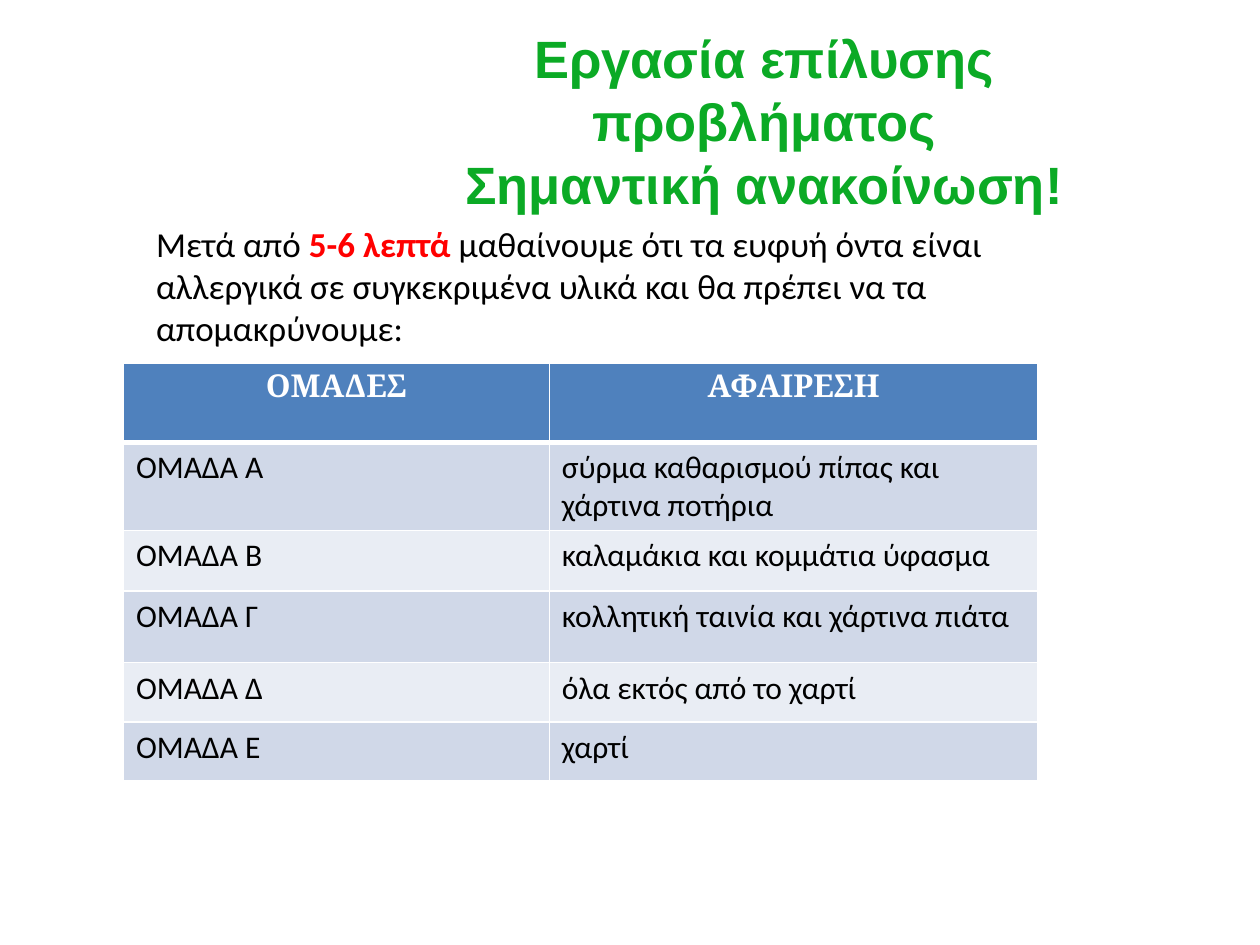
from lxml import etree
from pptx import Presentation
from pptx.dml.color import RGBColor
from pptx.enum.text import MSO_ANCHOR, PP_ALIGN
from pptx.oxml.ns import qn
from pptx.util import Inches, Pt

CENTER, LEFT = PP_ALIGN.CENTER, PP_ALIGN.LEFT
TOP, MIDDLE = MSO_ANCHOR.TOP, MSO_ANCHOR.MIDDLE
COLORS = {"title": "0BAA25", "text": "000000", "accent": "FF0000", "white": "FFFFFF",
          "header": "4F81BD", "odd": "D0D8E8", "even": "E9EDF4"}
TITLE = {"name": "Arial", "size": Pt(30), "bold": True, "color": "title"}
BODY = {"name": "Calibri", "size": Pt(20), "bold": False, "color": "text"}
ACCENT = {**BODY, "bold": True, "color": "accent"}
HEADER = {"name": "Cambria", "size": Pt(18), "bold": True, "color": "white"}
CELL = {**BODY, "size": Pt(18)}

COLUMN_WIDTHS = [3.38, 3.88]
ROW_HEIGHTS = [0.63, 0.69, 0.48, 0.57, 0.47, 0.47]
ROWS = [
    ("ΟΜΑΔΕΣ", "ΑΦΑΙΡΕΣΗ"),
    ("ΟΜΑΔΑ Α", "σύρμα καθαρισμού πίπας και χάρτινα ποτήρια"),
    ("ΟΜΑΔΑ Β", "καλαμάκια και κομμάτια ύφασμα"),
    ("ΟΜΑΔΑ Γ", "κολλητική ταινία και χάρτινα πιάτα"),
    ("ΟΜΑΔΑ Δ", "όλα εκτός από το χαρτί"),
    ("ΟΜΑΔΑ Ε", "χαρτί"),
]


def rgb(name):
    return RGBColor.from_string(COLORS[name])


def add_run(p, text, style):
    r = p.add_run()
    r.text = text
    for key, value in style.items():
        if key == "color":
            r.font.color.rgb = rgb(value)
        else:
            setattr(r.font, key, value)


def add_text(s, box, paragraphs, align, anchor):
    """Each paragraph is a list of (text, style) runs."""
    tf = s.shapes.add_textbox(*map(Inches, box)).text_frame
    tf.word_wrap = True
    tf.vertical_anchor = anchor
    for i, runs in enumerate(paragraphs):
        p = tf.paragraphs[0] if i == 0 else tf.add_paragraph()
        p.alignment = align
        for text, style in runs:
            add_run(p, text, style)


def add_title(s, box):
    lines = ["Εργασία επίλυσης προβλήματος", "Σημαντική ανακοίνωση!"]
    add_text(s, box, [[(line, TITLE)] for line in lines], CENTER, MIDDLE)


def add_intro(s, box):
    runs = [
        ("Μετά από ", BODY),
        ("5-6 λεπτά ", ACCENT),
        ("μαθαίνουμε ότι τα ευφυή όντα είναι αλλεργικά σε συγκεκριμένα υλικά "
         "και θα πρέπει να τα απομακρύνουμε:", BODY),
    ]
    add_text(s, box, [runs], LEFT, TOP)


def set_borders(cell, widths):
    """Draw white borders; widths maps the sides L, R, T, B to points."""
    tc_pr = cell._tc.get_or_add_tcPr()
    for i, (side, width) in enumerate(widths.items()):
        ln = etree.Element(qn(f"a:ln{side}"), w=str(Pt(width)))
        fill = etree.SubElement(ln, qn("a:solidFill"))
        etree.SubElement(fill, qn("a:srgbClr"), val=COLORS["white"])
        tc_pr.insert(i, ln)


def add_groups_table(s, box):
    table = s.shapes.add_table(len(ROWS), len(COLUMN_WIDTHS), *map(Inches, box)).table
    for column, width in zip(table.columns, COLUMN_WIDTHS):
        column.width = Inches(width)
    for i, (row, height, texts) in enumerate(zip(table.rows, ROW_HEIGHTS, ROWS)):
        row.height = Inches(height)
        fill = "header" if i == 0 else "odd" if i % 2 else "even"
        for cell, text in zip(row.cells, texts):
            cell.fill.solid()
            cell.fill.fore_color.rgb = rgb(fill)
            p = cell.text_frame.paragraphs[0]
            p.alignment = LEFT if i else CENTER
            add_run(p, text, CELL if i else HEADER)
            set_borders(cell, {"L": 1, "R": 1, "T": 3 if i == 1 else 1, "B": 1 if i else 3})


def main():
    prs = Presentation()
    prs.slide_width, prs.slide_height = Inches(10), Inches(7.5)
    s = prs.slides.add_slide(prs.slide_layouts[6])
    add_title(s, (2.72, 0.29, 6.69, 1.34))
    add_intro(s, (1.14, 1.72, 7.55, 1.1))
    add_groups_table(s, (0.98, 2.88, sum(COLUMN_WIDTHS), sum(ROW_HEIGHTS)))
    prs.save("out.pptx")


if __name__ == "__main__":
    main()
